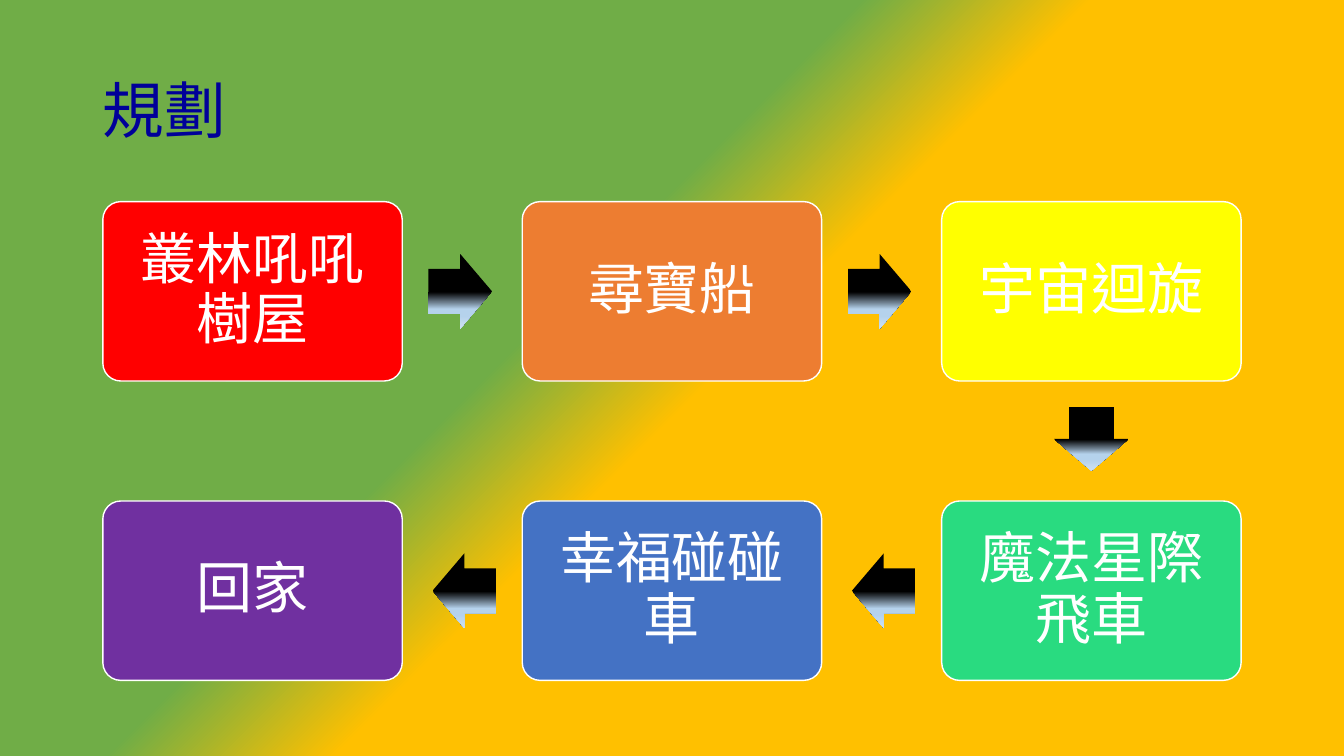
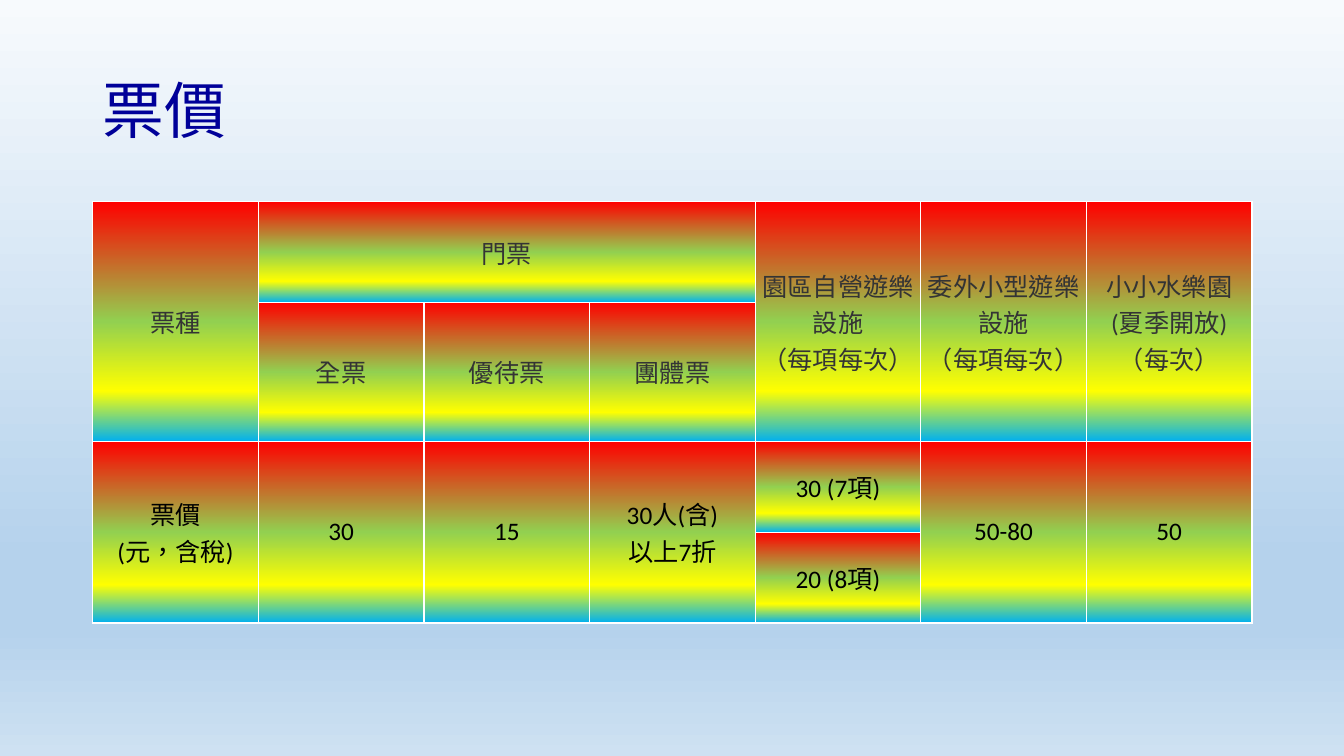
from itertools import pairwise
from math import atan2, degrees

from lxml.etree import SubElement
from pptx import Presentation
from pptx.dml.color import RGBColor
from pptx.enum.shapes import MSO_SHAPE as SHAPE
from pptx.enum.text import MSO_ANCHOR as ANCHOR, PP_ALIGN as ALIGN
from pptx.oxml.ns import qn
from pptx.util import Inches, Pt

WIDTH, HEIGHT = 13.33, 7.5
LATIN, CJK = "Calibri", "Noto Sans CJK JP"
C = {
    "title": "000099", "white": "FFFFFF", "black": "000000", "header": "343434",
    "red": "FF0000", "orange": "ED7D31", "yellow": "FFFF00", "mint": "29DB80",
    "blue": "4472C4", "purple": "7030A0", "gold": "FFC000", "grass": "70AD47",
    "mist": "F7FAFD", "sky": "B5D2EC", "haze": "CEE1F2", "lime": "92D050",
    "azure": "00B0F0",
}
GRADIENTS = {  # stops, clockwise angle
    "meadow": ([(41, "grass"), (52, "gold")], 45),
    "sky": ([(0, "mist"), (74, "sky"), (83, "sky"), (100, "haze")], 90),
    "arrow": ([(51, "black"), (74, "sky"), (83, "sky"), (100, "haze")], 90),
    "rainbow": ([(0, "red"), (50, "lime"), (79, "yellow"), (100, "azure")], 90),
}

# Flow grid: origin, distance between cells, box size
LEFT, TOP = 1.02, 2
STEP_X, STEP_Y = 4.16, 2.97
BOX_W, BOX_H = 2.97, 1.78
ARROW_W, ARROW_H, ARROW_BACK = 0.63, 0.74, 0.02

STOPS = [  # text, colour, column, row
    ("叢林吼吼樹屋", "red", 0, 0),
    ("尋寶船", "orange", 1, 0),
    ("宇宙迴旋", "yellow", 2, 0),
    ("魔法星際飛車", "mint", 2, 1),
    ("幸福碰碰車", "blue", 1, 1),
    ("回家", "purple", 0, 1),
]
ROW_HEIGHTS = [1, 1.38, 0.9, 0.9]
HEADER_ROWS = 2
PRICES = [  # row, column, rows spanned, columns spanned, text
    (0, 0, 2, 1, "票種"),
    (0, 1, 1, 3, "門票"),
    (0, 4, 2, 1, "園區自營遊樂設施\n（每項每次）"),
    (0, 5, 2, 1, "委外小型遊樂設施\n（每項每次）"),
    (0, 6, 2, 1, "小小水樂園\n(夏季開放)\n（每次）"),
    (1, 1, 1, 1, "全票"),
    (1, 2, 1, 1, "優待票"),
    (1, 3, 1, 1, "團體票"),
    (2, 0, 2, 1, "票價\n(元，含稅)"),
    (2, 1, 2, 1, "30"),
    (2, 2, 2, 1, "15"),
    (2, 3, 2, 1, "30人(含)\n以上7折"),
    (2, 4, 1, 1, "30 (7項)"),
    (2, 5, 2, 1, "50-80"),
    (2, 6, 2, 1, "50"),
    (3, 4, 1, 1, "20 (8項)"),
]


def rgb(name):
    return RGBColor.from_string(C[name])


def box_center(col, row):
    return LEFT + col * STEP_X + BOX_W / 2, TOP + row * STEP_Y + BOX_H / 2


class Deck:
    """Holds the shared style and the slide being built."""

    def __init__(self):
        self.prs = Presentation()
        self.prs.slide_width, self.prs.slide_height = Inches(WIDTH), Inches(HEIGHT)
        self.s = None

    def slide(self, title, background):
        self.s = self.prs.slides.add_slide(self.prs.slide_layouts[5])
        self.gradient(self.s.background.fill, self.s.element, background)
        sp = self.s.shapes.title
        sp.left, sp.top, sp.width, sp.height = map(Inches, (0.92, 0.4, 11.5, 1.45))
        sp.text_frame.vertical_anchor = ANCHOR.MIDDLE
        self.text(sp.text_frame, title, 44, "title", CJK, ALIGN.LEFT, 0.9)

    def gradient(self, fill, element, name):
        stops, angle = GRADIENTS[name]
        fill.gradient()
        fill.gradient_angle = 360 - angle
        grad = element.find(".//" + qn("a:gradFill"))
        grad.set("rotWithShape", "0")
        stop_list = grad.find(qn("a:gsLst"))
        for old in list(stop_list):
            stop_list.remove(old)
        for share, color in stops:
            stop = SubElement(stop_list, qn("a:gs"), pos=str(share * 1000))
            SubElement(stop, qn("a:srgbClr"), val=C[color])

    def text(self, tf, text, size, color, font=LATIN, align=ALIGN.CENTER, spacing=1.0):
        for i, line in enumerate(text.split("\n")):
            p = tf.add_paragraph() if i else tf.paragraphs[0]
            p.alignment, p.line_spacing = align, spacing
            r = p.add_run()
            r.text = line
            r.font.size, r.font.name = Pt(size), font
            r.font.color.rgb = rgb(color)
            props = r.font._element
            props.set("lang", "zh-TW")
            SubElement(props, qn("a:ea"), typeface=CJK)

    def shape(self, kind, center, w, h, adjustments):
        x, y = center
        sp = self.s.shapes.add_shape(
            kind, Inches(x - w / 2), Inches(y - h / 2), Inches(w), Inches(h))
        sp.shadow.inherit = False
        for i, value in enumerate(adjustments):
            sp.adjustments[i] = value
        return sp

    def box(self, text, color, col, row):
        sp = self.shape(SHAPE.ROUNDED_RECTANGLE, box_center(col, row), BOX_W, BOX_H, [0.1])
        sp.fill.solid()
        sp.fill.fore_color.rgb = rgb(color)
        sp.line.color.rgb, sp.line.width = rgb("white"), Pt(1)
        tf = sp.text_frame
        tf.word_wrap, tf.vertical_anchor = True, ANCHOR.MIDDLE
        tf.margin_left = tf.margin_right = tf.margin_top = tf.margin_bottom = Inches(0.17)
        self.text(tf, text, 40, "white", spacing=0.9)

    def arrow(self, start, end):
        """Point from one grid cell to the next, set slightly back from the middle."""
        (x1, y1), (x2, y2) = box_center(*start), box_center(*end)
        dx, dy = end[0] - start[0], end[1] - start[1]
        center = (x1 + x2) / 2 - dx * ARROW_BACK, (y1 + y2) / 2 - dy * ARROW_BACK
        sp = self.shape(SHAPE.RIGHT_ARROW, center, ARROW_W, ARROW_H, [0.6, 0.5])
        sp.rotation = degrees(atan2(dy, dx))
        sp.line.fill.background()
        self.gradient(sp.fill, sp.element, "arrow")

    def style_cell(self, cell):
        cell.vertical_anchor = ANCHOR.MIDDLE
        cell.margin_left = cell.margin_right = Inches(0.03)
        cell.margin_top = cell.margin_bottom = Inches(0.03)
        self.gradient(cell.fill, cell._tc, "rainbow")
        props = cell._tc.get_or_add_tcPr()
        for i, side in enumerate(("lnL", "lnR", "lnT", "lnB")):
            ln = SubElement(props, qn("a:" + side), w=str(Pt(1)))
            SubElement(SubElement(ln, qn("a:solidFill")), qn("a:srgbClr"), val=C["white"])
            props.insert(i, ln)

    def table(self, entries, columns, heights, x, y, w):
        tbl = self.s.shapes.add_table(
            len(heights), columns, Inches(x), Inches(y), Inches(w), Inches(sum(heights))).table
        tbl.first_row = tbl.horz_banding = False
        for row, height in zip(tbl.rows, heights):
            row.height = Inches(height)
        for cell in tbl.iter_cells():
            self.style_cell(cell)
        for row, col, down, across, text in entries:
            cell = tbl.cell(row, col)
            if down * across > 1:
                cell.merge(tbl.cell(row + down - 1, col + across - 1))
            color = "header" if row < HEADER_ROWS else "black"
            self.text(cell.text_frame, text, 18, color)


def main():
    deck = Deck()

    deck.slide("規劃", "meadow")
    for stop in STOPS:
        deck.box(*stop)
    for a, b in pairwise(STOPS):
        deck.arrow(a[2:], b[2:])

    deck.slide("票價", "sky")
    deck.table(PRICES, 7, ROW_HEIGHTS, 0.92, TOP, 11.5)

    deck.prs.save("out.pptx")


if __name__ == "__main__":
    main()
